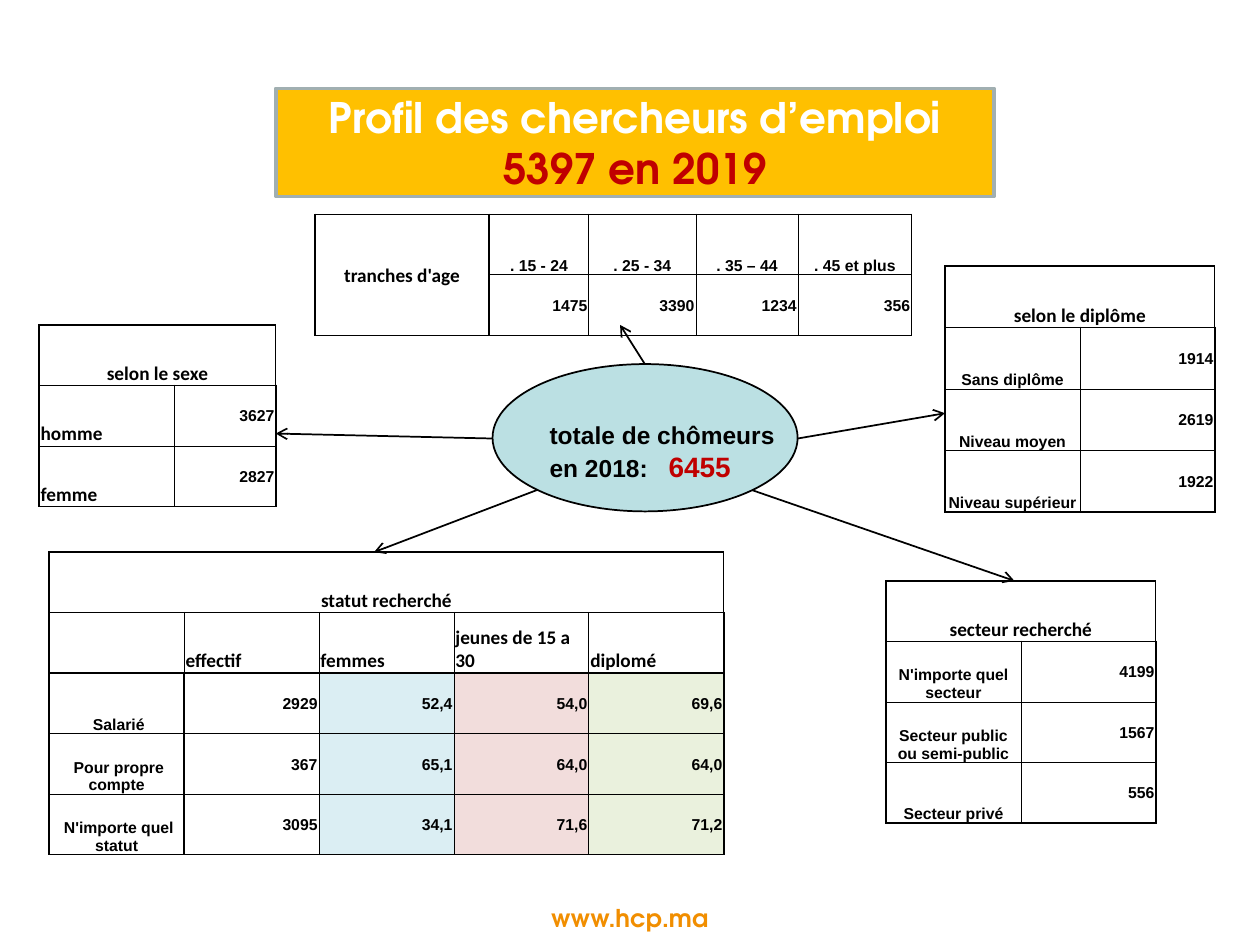
import pptx
import pptx.util
import pptx.dml.color
import pptx.enum.shapes
import pptx.enum.text
import pptx.oxml
import pptx.oxml.ns

Cm, Pt = pptx.util.Cm, pptx.util.Pt
ALIGN = pptx.enum.text.PP_ALIGN
MID = pptx.enum.text.MSO_ANCHOR.MIDDLE
LOW = pptx.enum.text.MSO_ANCHOR.BOTTOM
NS = pptx.oxml.ns.nsdecls("a")


def hue(code):
    return pptx.dml.color.RGBColor.from_string(code)


def put(item, values):
    for key, value in values.items():
        setattr(item, key, value)


def place(item, box):
    put(item, dict(zip(("left", "top", "width", "height"), map(Cm, box))))


def add_xml(parent, text):
    parent.append(pptx.oxml.parse_xml(text))


class Deck:
    # Font name and size for each kind of text
    fonts = {"big": ("Calibri", 11), "small": ("Arial", 9),
             "brand": ("TeX Gyre Adventor", 24), "site": ("TeX Gyre Adventor", 14),
             "total": ("Arial", 14), "count": ("Arial", 16)}
    # Font kind, alignment and anchor for each kind of cell
    cells = {"head": ("big", ALIGN.CENTER, LOW), "left": ("big", ALIGN.LEFT, LOW),
             "tall": ("big", ALIGN.CENTER, MID), "label": ("small", ALIGN.CENTER, LOW),
             "num": ("small", ALIGN.RIGHT, MID)}

    def __init__(self):
        self.prs = pptx.Presentation()
        put(self.prs, {"slide_width": Cm(25.4), "slide_height": Cm(19.05)})
        self.slide = self.prs.slides.add_slide(self.prs.slide_layouts[5])
        self.items = self.slide.shapes

    def words(self, par, text, kind, color="000000"):
        run = par.add_run()
        run.text = text
        name, size = self.fonts[kind]
        put(run.font, {"name": name, "size": Pt(size), "bold": True})
        run.font.color.rgb = hue(color)

    def paint(self, item, fill, line, width):
        item.fill.solid()
        item.fill.fore_color.rgb = hue(fill)
        item.line.color.rgb = hue(line)
        item.line.width = Pt(width)

    def title(self, box, lines):
        item = self.items.title
        place(item, box)
        self.paint(item, "FFC000", "A1AFB1", 2)
        frame = item.text_frame
        put(frame, {"auto_size": pptx.enum.text.MSO_AUTO_SIZE.NONE,
                    "vertical_anchor": MID, "word_wrap": True})
        for i, (text, color) in enumerate(lines):
            par = frame.add_paragraph() if i else frame.paragraphs[0]
            put(par, {"alignment": ALIGN.CENTER, "space_before": Pt(0)})
            self.words(par, text, "brand", color)

    def label(self, box, text, kind, color):
        frame = self.items.add_textbox(*map(Cm, box)).text_frame
        frame.word_wrap = True
        par = frame.paragraphs[0]
        par.alignment = ALIGN.CENTER
        self.words(par, text, kind, color)

    def oval(self, box, first, second, count):
        item = self.items.add_shape(pptx.enum.shapes.MSO_SHAPE.OVAL, *map(Cm, box))
        item.shadow.inherit = False
        self.paint(item, "BBE0E3", "000000", 1)
        frame = item.text_frame
        put(frame, {"word_wrap": False, "vertical_anchor": MID, "margin_top": Cm(0.7)})
        top, low = frame.paragraphs[0], frame.add_paragraph()
        top.alignment = low.alignment = ALIGN.LEFT
        # A tab stop sets the gap before the count
        add_xml(low._p.get_or_add_pPr(),
                f'<a:tabLst {NS}><a:tab pos="{Cm(2.4)}" algn="l"/></a:tabLst>')
        self.words(top, first, "total")
        self.words(low, second + "\t", "total")
        self.words(low, count, "count", "C00000")

    def arrow(self, start, end):
        item = self.items.add_connector(pptx.enum.shapes.MSO_CONNECTOR.STRAIGHT,
                                        *map(Cm, start + end))
        item.line.color.rgb = hue("000000")
        item.line.width = Pt(1)
        add_xml(item.line._get_or_add_ln(), f'<a:tailEnd {NS} type="arrow"/>')
        add_xml(item._element.spPr, f"<a:effectLst {NS}/>")

    def border(self, cell, sides):
        for side, width in sides.items():
            add_xml(cell._tc.get_or_add_tcPr(),
                    f'<a:ln{side} {NS} w="{Pt(width)}"><a:solidFill>'
                    f'<a:srgbClr val="000000"/></a:solidFill></a:ln{side}>')

    def grid(self, spot, cols, rows, step=1.22, heads=1, side=False,
             names="label", fills=()):
        """Heads are the rows closed by a thick line; side closes column one."""
        high, wide = len(rows), len(cols)
        box = (*spot, sum(cols), step * high)
        table = self.items.add_table(high, wide, *map(Cm, box)).table
        put(table, {"first_row": False, "horz_banding": False})
        for col, width in zip(table.columns, cols):
            col.width = Cm(width)
        for r, row in enumerate(rows):
            table.rows[r].height = Cm(step)
            for c in range(wide):
                cell = table.cell(r, c)
                text = row[c] if c < len(row) else ""
                edge = side and r >= heads
                thick = {"L": c == 0 or edge and c == 1,
                         "R": c == wide - 1 or edge and c == 0,
                         "T": r <= heads, "B": r < heads or r == high - 1}
                # Headless tables keep a thin line between their rows
                if not heads:
                    thick["T"] = r == 0
                self.border(cell, {k: 1 if v else 0.5 for k, v in thick.items()})
                if c in fills and r >= heads:
                    cell.fill.solid()
                    cell.fill.fore_color.rgb = hue(fills[c])
                else:
                    cell.fill.background()
                if text.replace(",", "").isdigit():
                    kind = "num"
                elif r < heads:
                    kind = "left" if r else "head"
                else:
                    kind = names if heads or c else "tall"
                self.fill_cell(cell, text, kind)
        # One heading spans the first row, or else the first column
        last = table.cell(0, wide - 1) if heads else table.cell(high - 1, 0)
        table.cell(0, 0).merge(last)

    def fill_cell(self, cell, text, kind):
        font, align, anchor = self.cells[kind]
        put(cell, {"margin_left": Cm(0.03), "margin_right": Cm(0.03),
                   "margin_top": Cm(0.03), "margin_bottom": 0,
                   "vertical_anchor": anchor})
        par = cell.text_frame.paragraphs[0]
        par.alignment = align
        if text:
            self.words(par, text, font)


def main():
    deck = Deck()
    col = 2.72

    # Title and site address
    deck.title((5.56, 1.78, 14.48, 2.18),
               [("Profil des chercheurs d’emploi", "FFFFFF"), ("5397 en 2019", "C00000")])
    deck.label((9.7, 18.08, 5.99, 0.84), "www.hcp.ma", "site", "F18E00")

    # Tables around the total
    deck.grid((0.79, 6.55), (col, 2.05),
              [("selon le sexe",), ("homme", "3627"), ("femme", "2827")], names="left")
    deck.grid((19.05, 5.36), (col, col),
              [("selon le diplôme",), ("Sans diplôme", "1914"),
               ("Niveau moyen", "2619"), ("Niveau supérieur", "1922")], step=1.24)
    deck.grid((0.99, 11.13), (col,) * 5,
              [("statut recherché",),
               ("", "effectif", "femmes", "jeunes de 15 a 30", "diplomé"),
               (" Salarié", "2929", "52,4", "54,0", "69,6"),
               (" Pour propre compte", "367", "65,1", "64,0", "64,0"),
               (" N'importe quel statut", "3095", "34,1", "71,6", "71,2")],
              heads=2, side=True, fills={2: "DBEEF3", 3: "F2DDDC", 4: "EAF1DD"})
    deck.grid((17.86, 11.71), (col, col),
              [("secteur recherché",), ("N'importe quel secteur", "4199"),
               ("Secteur public ou semi-public", "1567"), ("Secteur privé", "556")])

    # Total, with the age table above it
    deck.oval((9.93, 7.34, 6.15, 2.97), "totale de chômeurs", "en 2018:", "6455")
    deck.grid((6.35, 4.32), (3.51, 2.01, 2.16, 2.06, 2.29),
              [("tranches d'age", ". 15 - 24", ". 25 - 34", ". 35 – 44", ". 45 et plus"),
               ("", "1475", "3390", "1234", "356")], heads=0, side=True)

    # Arrows from the total to each table
    for start, end in [((15.16, 9.88), (20.45, 11.71)), ((13, 7.34), (12.5, 6.55)),
                       ((16.08, 8.84), (19.05, 8.33)), ((10.82, 9.88), (7.54, 11.13)),
                       ((9.93, 8.84), (5.56, 8.74))]:
        deck.arrow(start, end)

    deck.prs.save("out.pptx")


if __name__ == "__main__":
    main()
